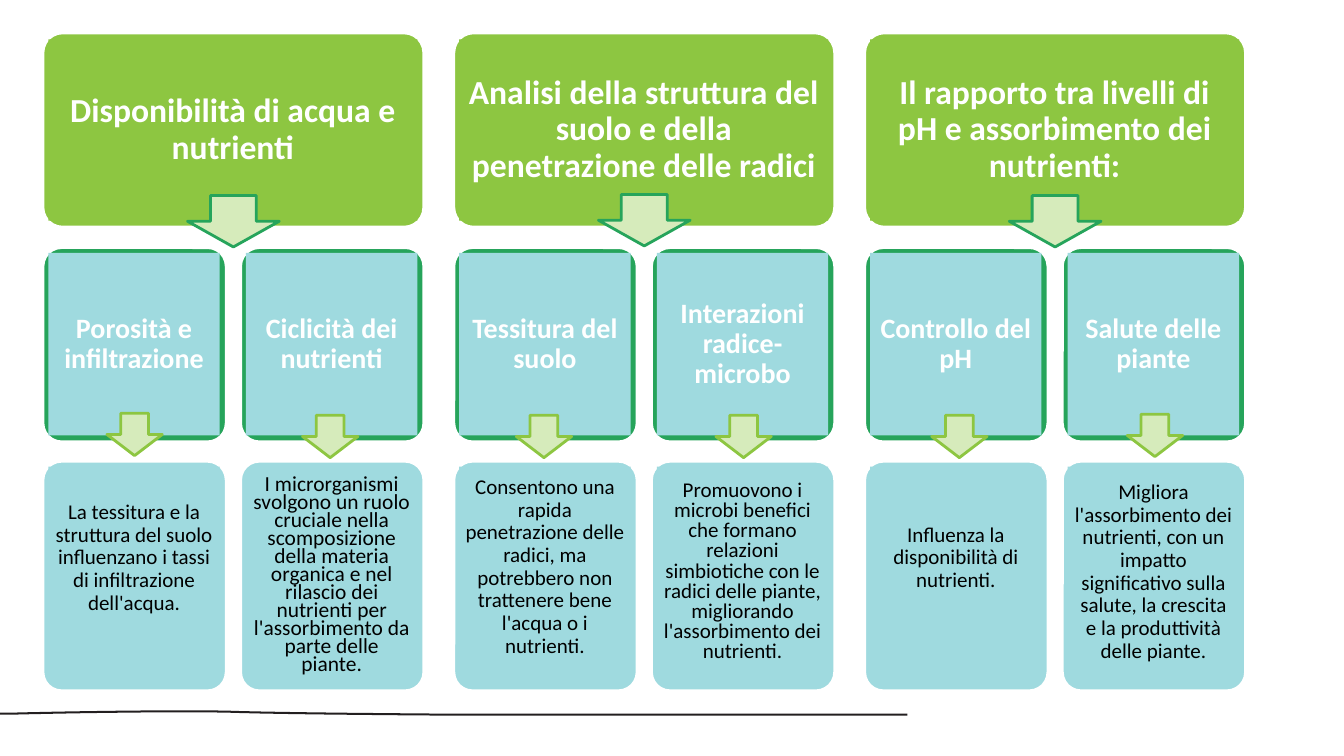
import pptx
import pptx.util
import pptx.dml.color
import pptx.enum.shapes
import pptx.enum.text
from dataclasses import dataclass

Inches = pptx.util.Inches
RGBColor = pptx.dml.color.RGBColor
Shapes = pptx.enum.shapes.MSO_SHAPE

LIME = RGBColor(0x8D, 0xC6, 0x41)
GREEN = RGBColor(0x26, 0xA4, 0x5B)
AQUA = RGBColor(0x9F, 0xDA, 0xDF)
PALE = RGBColor(0xD6, 0xEB, 0xBB)
WHITE = RGBColor(0xFF, 0xFF, 0xFF)
BLACK = RGBColor(0, 0, 0)
INK = RGBColor(0x23, 0x1F, 0x20)

LEFT = 0.43
THEME_PITCH = (8.58 - LEFT) / 2
TOPIC_PITCH = 1.96
THEME_WIDTH = 3.77
TOPIC_WIDTH = 1.81
MARGIN = 0.05


@dataclass
class Topic:
    title: str
    detail: str
    arrow_left: float
    arrow_top: float = 4.12
    detail_height: float = 2.09
    detail_top: float = 4.63
    size: float = 15
    spacing: float = 0.9


THEMES = [
    ("Disponibilità di acqua e nutrienti", 1.94, [
        Topic("Porosità e infiltrazione",
              "La tessitura e la struttura del suolo influenzano i tassi di "
              "infiltrazione dell'acqua.", 1.06, arrow_top=4.1, detail_height=1.81),
        Topic("Ciclicità dei nutrienti",
              "I microrganismi svolgono un ruolo cruciale nella scomposizione della "
              "materia organica e nel rilascio dei nutrienti per l'assorbimento da "
              "parte delle piante.", 3, detail_top=4.67, size=15.3, spacing=0.7),
    ]),
    ("Analisi della struttura del suolo e della penetrazione delle radici", 1.93, [
        Topic("Tessitura del suolo",
              "Consentono una rapida penetrazione delle radici, ma potrebbero non "
              "trattenere bene l'acqua o i nutrienti.", 5.12, detail_height=1.99),
        Topic("Interazioni radice-microbo",
              "Promuovono i microbi benefici che formano relazioni simbiotiche con le "
              "radici delle piante, migliorando l'assorbimento dei nutrienti.", 7.1,
              spacing=0.8),
    ]),
    ("Il rapporto tra livelli di pH e assorbimento dei nutrienti:", 1.94, [
        Topic("Controllo del pH", "Influenza la disponibilità di nutrienti.", 9.24,
              detail_height=1.81),
        Topic("Salute delle piante",
              "Migliora l'assorbimento dei nutrienti, con un impatto significativo "
              "sulla salute, la crescita e la produttività delle piante.", 11.18,
              arrow_top=4.11),
    ]),
]

WAVE = [
    [(0, 7.08), (0.01, 7.08), (0.06, 7.08), (0.14, 7.08)],
    [(0.14, 7.08), (0.52, 7.07), (1.55, 7.05), (2.23, 7.06)],
    [(2.23, 7.06), (2.81, 7.08), (4.41, 7.09), (4.43, 7.09)],
]


def add_shape(page, kind, left, top, width, height, fill, line=None, weight=1.5):
    shape = page.shapes.add_shape(
        kind, Inches(left), Inches(top), Inches(width), Inches(height))
    shape.shadow.inherit = False
    shape.fill.solid()
    shape.fill.fore_color.rgb = fill
    if line is None:
        shape.line.fill.background()
    else:
        shape.line.color.rgb = line
        shape.line.width = pptx.util.Pt(weight)
    return shape


def add_card(page, left, top, width, height, fill):
    card = add_shape(page, Shapes.ROUNDED_RECTANGLE, left, top, width, height, fill, WHITE)
    card.adjustments[0] = 0.1


def add_panel(page, left, top, width, height, fill, text, size, color,
              bold=False, spacing=0.9, inset=0.07):
    panel = add_shape(page, Shapes.RECTANGLE, left, top, width, height, fill)
    frame = panel.text_frame
    frame.word_wrap = True
    frame.vertical_anchor = pptx.enum.text.MSO_ANCHOR.MIDDLE
    frame.margin_left = frame.margin_right = Inches(inset)
    frame.margin_top = frame.margin_bottom = Inches(inset)
    para = frame.paragraphs[0]
    para.text = text
    para.alignment = pptx.enum.text.PP_ALIGN.CENTER
    para.line_spacing = spacing
    para.font.name = "Calibri"
    para.font.size = pptx.util.Pt(size)
    para.font.bold = bold
    para.font.color.rgb = color


def add_topic(page, left, topic):
    inner = left + MARGIN
    add_card(page, left, 2.46, TOPIC_WIDTH, 1.92, GREEN)
    add_panel(page, inner, 2.51, 1.7, 1.81, AQUA, topic.title, 20, WHITE, bold=True)
    add_card(page, left, 4.58, TOPIC_WIDTH, 2.27, AQUA)
    add_panel(page, inner, topic.detail_top, 1.7, topic.detail_height, AQUA,
              topic.detail, topic.size, BLACK, spacing=topic.spacing, inset=0.06)
    add_shape(page, Shapes.DOWN_ARROW, topic.arrow_left, topic.arrow_top,
              0.55, 0.42, PALE, LIME, 2)


def add_theme(page, left, title, arrow_top, topics):
    add_card(page, left, 0.33, THEME_WIDTH, 1.92, LIME)
    add_panel(page, left + MARGIN, 0.39, 3.66, 1.8, LIME, title, 24, WHITE, bold=True)
    for index, topic in enumerate(topics):
        add_topic(page, left + index * TOPIC_PITCH, topic)
    add_shape(page, Shapes.DOWN_ARROW, left + 1.43, arrow_top, 0.91, 0.51, PALE, GREEN, 2)


def curve_point(controls, step):
    rest = 1 - step
    weights = (rest ** 3, 3 * rest ** 2 * step, 3 * rest * step ** 2, step ** 3)
    return tuple(sum(weight * point[axis] for weight, point in zip(weights, controls))
                 for axis in (0, 1))


def add_wave(page):
    middle = [curve_point(controls, step / 12) for controls in WAVE for step in range(12)]
    middle += [WAVE[-1][-1], (9, 7.09)]
    outline = [(x, y - 0.01) for x, y in middle]
    outline += [(x, y + 0.01) for x, y in reversed(middle)]
    points = [(Inches(x), Inches(y)) for x, y in outline]
    builder = page.shapes.build_freeform(*points[0])
    builder.add_line_segments(points[1:], close=True)
    wave = builder.convert_to_shape()
    wave.shadow.inherit = False
    wave.fill.solid()
    wave.fill.fore_color.rgb = INK
    wave.line.fill.background()


def main():
    deck = pptx.Presentation()
    deck.slide_width = Inches(13.33)
    deck.slide_height = Inches(7.5)
    page = deck.slides.add_slide(deck.slide_layouts[6])
    add_wave(page)
    for index, (title, arrow_top, topics) in enumerate(THEMES):
        add_theme(page, LEFT + index * THEME_PITCH, title, arrow_top, topics)
    deck.save("out.pptx")


if __name__ == "__main__":
    main()
